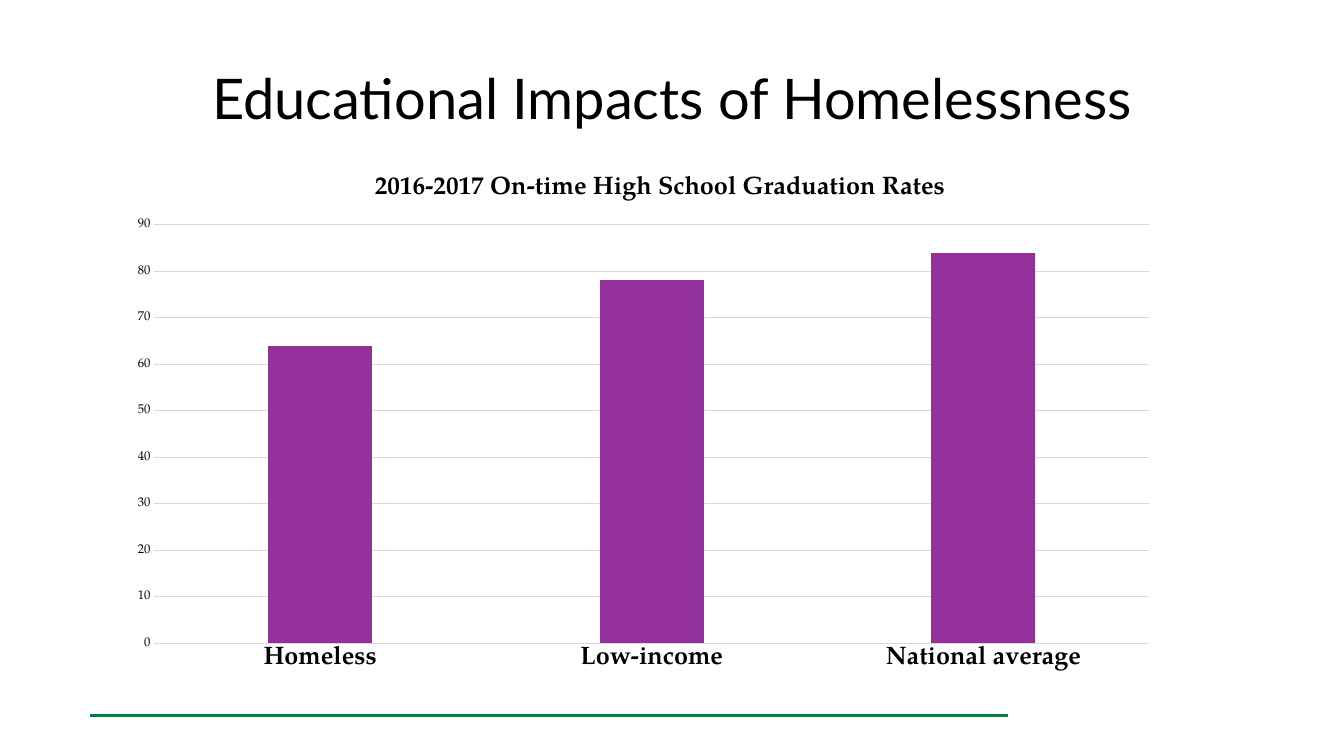
from lxml import etree
from pptx import Presentation
from pptx.chart.data import CategoryChartData
from pptx.dml.color import RGBColor
from pptx.enum import chart as ch, text
from pptx.oxml import parse_xml
from pptx.oxml.ns import nsdecls, qn
from pptx.util import Pt

SERIF = "TeX Gyre Pagella"


def style(font, size, face, bold=False):
    font.size, font.name, font.bold = Pt(size), face, bold
    font.color.rgb = RGBColor.from_string("000000")


def place(node, index, **spots):
    """Give a chart part a manual layout, in fractions of the chart."""
    for old in node.findall(qn("c:layout")):
        node.remove(old)
    box = parse_xml(f"<c:layout {nsdecls('c')}><c:manualLayout/></c:layout>")
    for tag, val in spots.items():
        etree.SubElement(box[0], qn(f"c:{tag}")).set("val", str(val))
    node.insert(index, box)


deck = Presentation()
deck.slide_width, deck.slide_height = Pt(960), Pt(540)
slide = deck.slides.add_slide(deck.slide_layouts[5])

# Footer rule
rule = slide.shapes.add_connector(1, Pt(64), Pt(511), Pt(720), Pt(511))
rule.line.color.rgb = RGBColor.from_string("00823E")
rule.line.width = Pt(2.25)
etree.SubElement(rule._element.spPr, qn("a:effectLst"))

# Slide title
title = slide.shapes.title
title.left, title.top, title.width, title.height = Pt(48), Pt(24), Pt(864), Pt(90)
title.text_frame.text = "Educational Impacts of Homelessness"
title.text_frame.vertical_anchor = text.MSO_ANCHOR.MIDDLE
head = title.text_frame.paragraphs[0]
head.alignment = text.PP_ALIGN.CENTER
style(head.font, 40, "Lato")

# Graduation rate chart
data = CategoryChartData()
data.categories = ["Homeless", "Low-income", "National average"]
data.add_series("Series 1", [64, 78, 84])
chart = slide.shapes.add_chart(
    ch.XL_CHART_TYPE.COLUMN_CLUSTERED, Pt(84), Pt(113), Pt(752), Pt(374.5), data
).chart
style(chart.font, 10, SERIF)
chart.has_legend = False

# Chart title
chart.has_title = True
label = chart.chart_title.text_frame
label.text = "2016-2017 On-time High School Graduation Rates"
style(label.paragraphs[0].font, 18, SERIF, True)
chart.chart_title.include_in_layout = False
place(chart.chart_title._element, 1, xMode="edge", yMode="edge", x=0.24, y=0.02)

# Columns
plot = chart.plots[0]
plot.gap_width, plot.overlap, plot.vary_by_categories = 219, -27, False
fill = plot.series[0].format.fill
fill.solid()
fill.fore_color.rgb = RGBColor.from_string("93309B")
place(chart._chartSpace.chart.plotArea, 0, layoutTarget="inner", xMode="edge",
      yMode="edge", x=0.035, y=0.127, w=0.945, h=0.798)

# Axes and gridlines
cats, vals = chart.category_axis, chart.value_axis
for axis, size, bold in (cats, 18, True), (vals, 9, False):
    style(axis.tick_labels.font, size, SERIF, bold)
    axis.major_tick_mark = axis.minor_tick_mark = ch.XL_TICK_MARK.NONE
vals.minimum_scale, vals.maximum_scale, vals.major_unit = 0, 90, 10
vals.format.line.fill.background()
for line in cats.format.line, vals.major_gridlines.format.line:
    line.color.rgb = RGBColor.from_string("D9D9D9")
    line.width = Pt(0.75)

deck.save("out.pptx")
